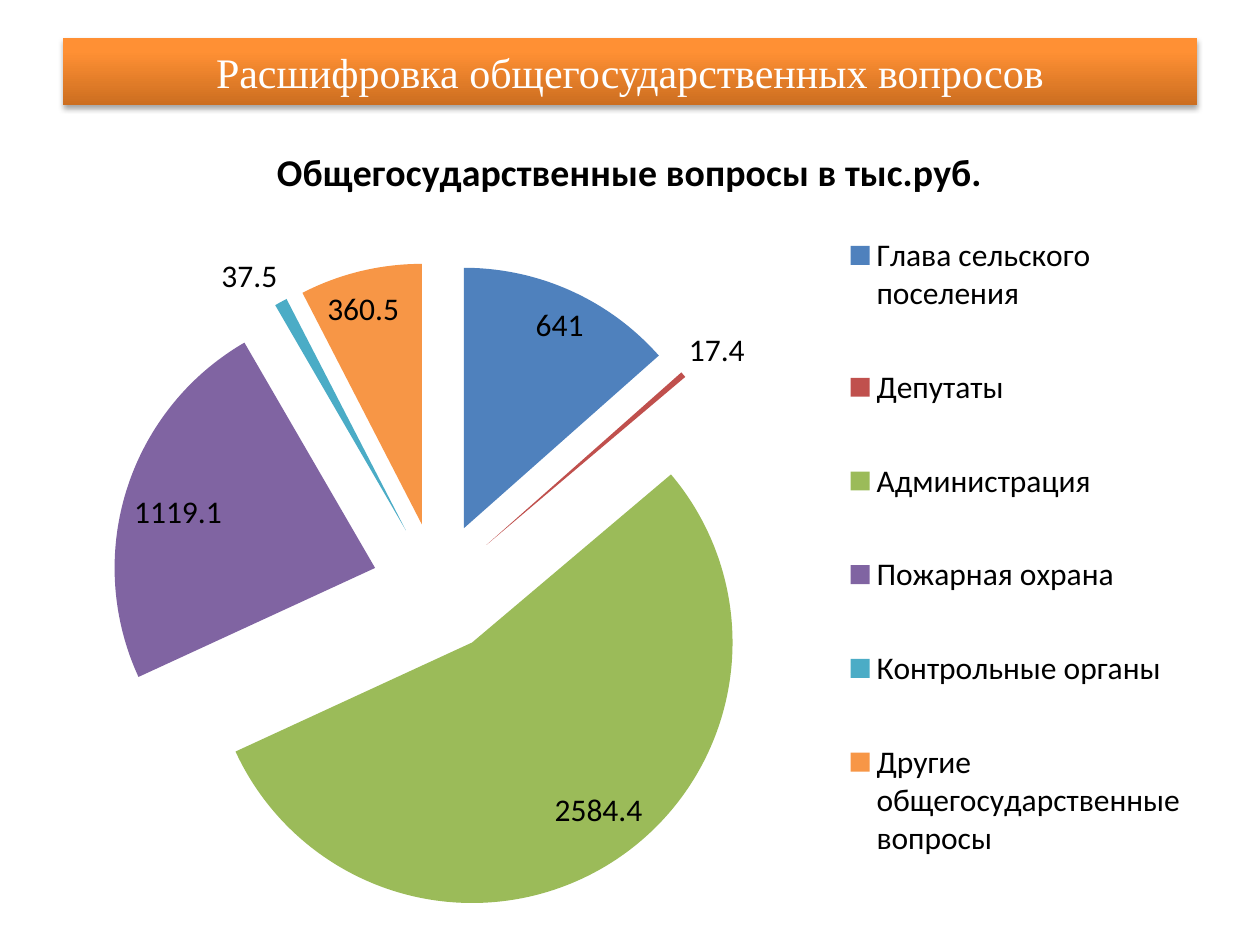
from lxml.etree import SubElement
from pptx import Presentation
from pptx.chart.data import CategoryChartData
from pptx.dml.color import RGBColor
from pptx.enum.chart import XL_CHART_TYPE, XL_LABEL_POSITION, XL_LEGEND_POSITION
from pptx.enum.shapes import MSO_SHAPE
from pptx.enum.text import MSO_ANCHOR, PP_ALIGN
from pptx.oxml import parse_xml
from pptx.oxml.ns import nsdecls, qn
from pptx.util import Cm, Pt

# Content
HEADING = "Расшифровка общегосударственных вопросов"
CHART_TITLE = "Общегосударственные вопросы в тыс.руб."
SECTORS = [
    ("Глава сельского поселения", 641, RGBColor(0x4F, 0x81, 0xBD)),
    ("Депутаты", 17.4, RGBColor(0xC0, 0x50, 0x4D)),
    ("Администрация", 2584.4, RGBColor(0x9B, 0xBB, 0x59)),
    ("Пожарная охрана", 1119.1, RGBColor(0x80, 0x64, 0xA2)),
    ("Контрольные органы", 37.5, RGBColor(0x4B, 0xAC, 0xC6)),
    ("Другие общегосударственные вопросы", 360.5, RGBColor(0xF7, 0x96, 0x46)),
]
WHITE = RGBColor(0xFF, 0xFF, 0xFF)
BLACK = RGBColor(0x00, 0x00, 0x00)
HEADING_STOPS = [(0, "CC6E20"), (80, "FF9034"), (100, "FF9136")]

# Shares of the chart frame: left, top, width, height
PLOT_AREA = (0.04, 0.18, 0.58, 0.8)
LEGEND_AREA = (0.69, 0.08, 0.3, 0.9)


def style_heading(shape):
    """Give the heading its upward gradient and soft shadow."""
    stops = "".join(
        f'<a:gs pos="{position * 1000}"><a:srgbClr val="{color}"/></a:gs>'
        for position, color in HEADING_STOPS)
    shape.line.fill.background()
    shape.fill.background()
    properties = shape.element.spPr
    no_fill = properties.find(qn("a:noFill"))
    properties.replace(no_fill, parse_xml(
        f'<a:gradFill {nsdecls("a")} rotWithShape="1"><a:gsLst>{stops}</a:gsLst>'
        '<a:lin ang="16200000" scaled="0"/></a:gradFill>'))
    properties.append(parse_xml(
        f'<a:effectLst {nsdecls("a")}>'
        '<a:outerShdw blurRad="40000" dist="23000" dir="5400000" rotWithShape="0">'
        '<a:srgbClr val="000000"><a:alpha val="35000"/></a:srgbClr>'
        '</a:outerShdw></a:effectLst>'))


def place(element, area, index, inner=False):
    """Set a manual layout, as child number index, on a chart part."""
    old_layout = element.find(qn("c:layout"))
    if old_layout is not None:
        element.remove(old_layout)
    layout = parse_xml(f'<c:layout {nsdecls("c")}/>')
    element.insert(index, layout)
    manual = SubElement(layout, qn("c:manualLayout"))
    settings = [("layoutTarget", "inner")] if inner else []
    settings += [("xMode", "edge"), ("yMode", "edge"), *zip("xywh", area)]
    for name, value in settings:
        SubElement(manual, qn(f"c:{name}")).set("val", str(value))


def add_text(paragraph, text, font_name, size, color, bold=False):
    run = paragraph.add_run()
    run.text = text
    run.font.name, run.font.size, run.font.bold = font_name, Pt(size), bold
    run.font.color.rgb = color


presentation = Presentation()
presentation.slide_width, presentation.slide_height = Cm(25.4), Cm(19.05)
slide = presentation.slides.add_slide(presentation.slide_layouts[6])

# Heading bar
heading = slide.shapes.add_shape(
    MSO_SHAPE.RECTANGLE, Cm(1.27), Cm(0.76), Cm(22.86), Cm(1.36))
style_heading(heading)
heading.text_frame.word_wrap = True
heading.text_frame.vertical_anchor = MSO_ANCHOR.MIDDLE
paragraph = heading.text_frame.paragraphs[0]
paragraph.alignment = PP_ALIGN.CENTER
add_text(paragraph, HEADING, "Times New Roman", 24, WHITE)

# Exploded pie chart
data = CategoryChartData()
data.categories = [name for name, _, _ in SECTORS]
data.add_series(CHART_TITLE, [value for _, value, _ in SECTORS])
chart = slide.shapes.add_chart(
    XL_CHART_TYPE.PIE, Cm(1.27), Cm(2.33), Cm(22.86), Cm(16.41), data).chart
chart.font.name, chart.font.size = "Calibri", Pt(18)
chart.font.color.rgb = BLACK

chart.has_title = True
add_text(chart.chart_title.text_frame.paragraphs[0], CHART_TITLE,
         "Calibri", 21.6, BLACK, bold=True)

# Sector colours and explosion
plot = chart.plots[0]
plot.vary_by_categories = True
series = plot.series[0]
for index, (_, _, color) in enumerate(SECTORS):
    fill = series.points[index].format.fill
    fill.solid()
    fill.fore_color.rgb = color
points = series._element.findall(qn("c:dPt"))
for follower in [points[0], *(point.find(qn("c:spPr")) for point in points)]:
    follower.addprevious(parse_xml(f'<c:explosion {nsdecls("c")} val="25"/>'))

# Value labels
plot.has_data_labels = True
labels = plot.data_labels
labels.show_value, labels.show_percentage = True, False
labels.position = XL_LABEL_POSITION.BEST_FIT

# Legend and layout
chart.has_legend = True
chart.legend.position = XL_LEGEND_POSITION.RIGHT
chart.legend.include_in_layout = False
place(chart.legend._element, LEGEND_AREA, 1)
place(chart._chartSpace.chart.plotArea, PLOT_AREA, 0, inner=True)

presentation.save("out.pptx")
